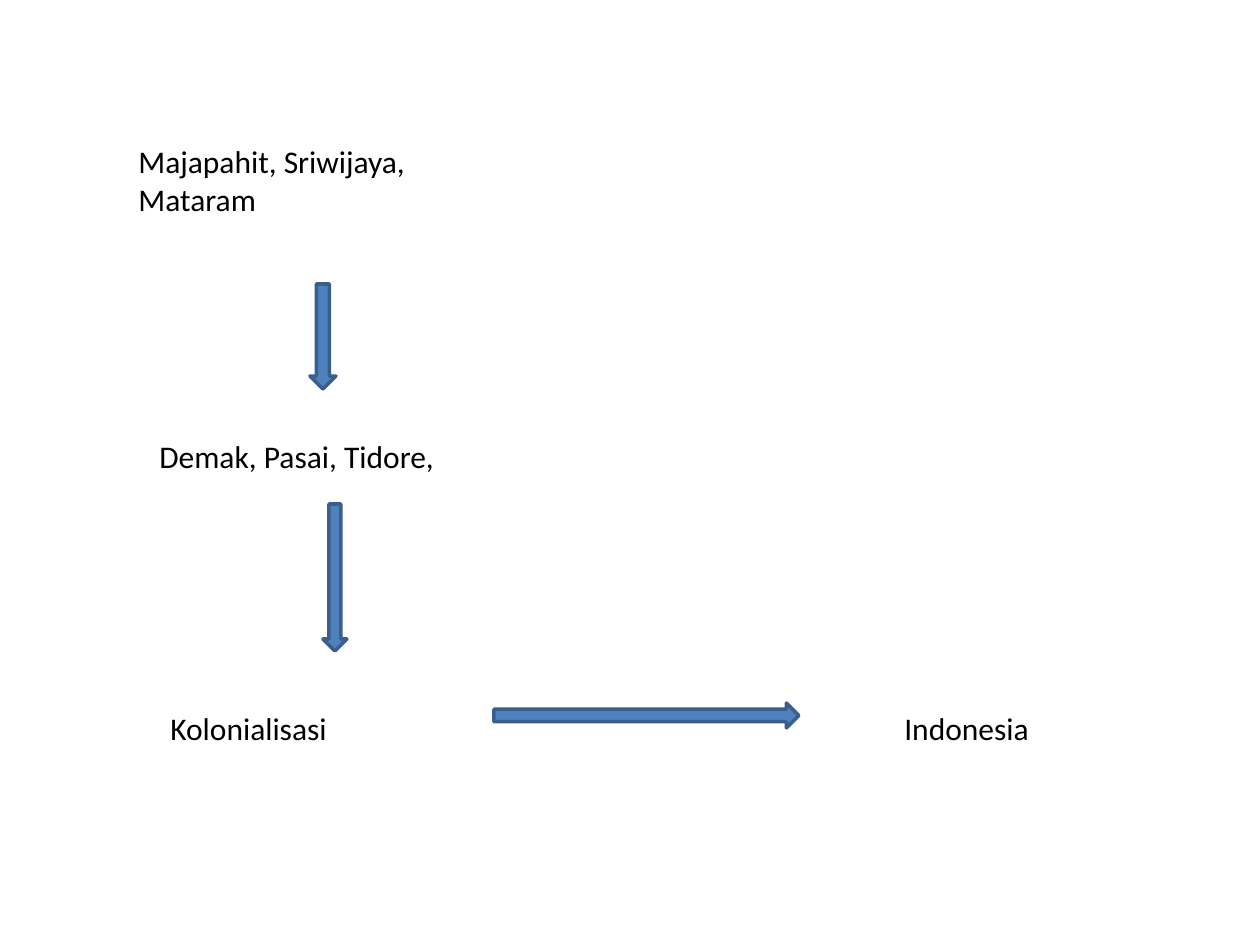
from pptx import Presentation
from pptx.dml.color import RGBColor
from pptx.enum.shapes import MSO_SHAPE
from pptx.enum.text import MSO_AUTO_SIZE
from pptx.util import Emu, Pt

PX_PER_INCH = 126
EMU_PER_PX = 914400 / PX_PER_INCH
BLANK_LAYOUT = 6

BLACK = RGBColor(0x00, 0x00, 0x00)
ARROW_FILL = RGBColor(0x4F, 0x81, 0xBD)
ARROW_LINE = RGBColor(0x3A, 0x5F, 0x8C)

LABEL_FONT = {"name": "Calibri", "size": Pt(18)}
LABEL_FRAME = {"word_wrap": True, "auto_size": MSO_AUTO_SIZE.SHAPE_TO_FIT_TEXT}

# Boxes are left, top, width, height in px
LABELS = [
    ("Majapahit, Sriwijaya, Mataram", (126, 136, 368, 89)),
    ("Demak, Pasai, Tidore,", (147, 431, 325, 50)),
    ("Kolonialisasi", (158, 703, 315, 50)),
    ("Indonesia", (892, 703, 305, 50)),
]
ARROWS = [
    (MSO_SHAPE.DOWN_ARROW, (310, 284, 26, 105)),
    (MSO_SHAPE.DOWN_ARROW, (323, 504, 24, 147)),
    (MSO_SHAPE.RIGHT_ARROW, (494, 703, 305, 25)),
]


def px(length):
    return Emu(round(length * EMU_PER_PX))


def apply_format(target, values):
    for name, value in values.items():
        setattr(target, name, value)


def add_label(slide, text, box):
    text_frame = slide.shapes.add_textbox(*map(px, box)).text_frame
    apply_format(text_frame, LABEL_FRAME)
    run = text_frame.paragraphs[0].add_run()
    run.text = text
    apply_format(run.font, LABEL_FONT)
    run.font.color.rgb = BLACK


def add_arrow(slide, kind, box):
    arrow = slide.shapes.add_shape(kind, *map(px, box))
    arrow.shadow.inherit = False
    arrow.fill.solid()
    arrow.fill.fore_color.rgb = ARROW_FILL
    arrow.line.color.rgb = ARROW_LINE
    arrow.line.width = Pt(2)


def add_timeline(slide):
    for text, box in LABELS:
        add_label(slide, text, box)
    for kind, box in ARROWS:
        add_arrow(slide, kind, box)


def main():
    presentation = Presentation()
    presentation.slide_width = px(1260)
    presentation.slide_height = px(945)
    slide = presentation.slides.add_slide(presentation.slide_layouts[BLANK_LAYOUT])
    add_timeline(slide)
    presentation.save("out.pptx")


if __name__ == "__main__":
    main()
